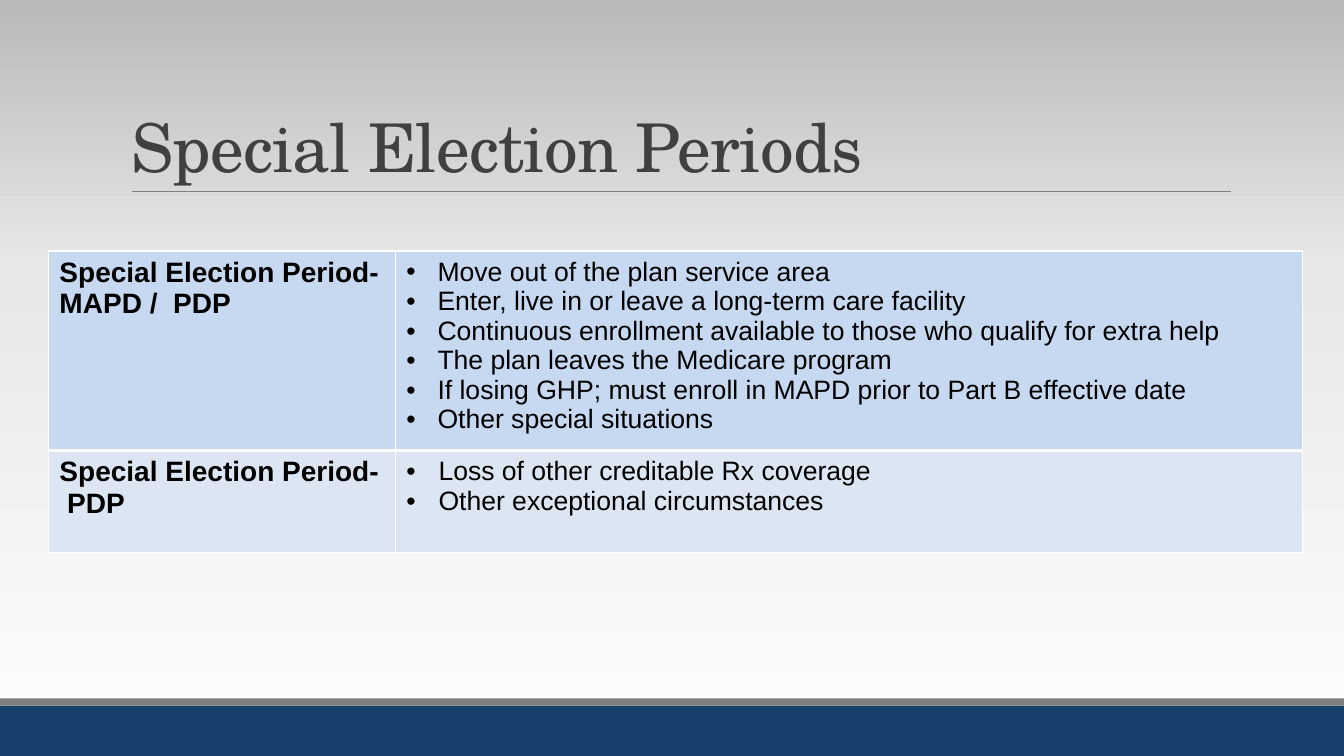
from lxml.etree import SubElement
from pptx import Presentation
from pptx.dml.color import RGBColor
from pptx.enum.shapes import MSO_CONNECTOR, MSO_SHAPE
from pptx.enum.text import MSO_ANCHOR, PP_ALIGN
from pptx.oxml import parse_xml
from pptx.oxml.ns import nsdecls, qn
from pptx.util import Inches, Pt

TITLE = "Special Election Periods"
# label, bullet indent in inches, row height in inches, fill, bullets
PERIODS = [
    ("Special Election Period- MAPD /  PDP", 0.31, 1.98, RGBColor(0xC6, 0xD9, 0xF1), [
        "Move out of the plan service area",
        "Enter, live in or leave a long-term care facility",
        "Continuous enrollment available to those who qualify for extra help",
        "The plan leaves the Medicare program",
        "If losing GHP; must enroll in MAPD prior to Part B effective date",
        "Other special situations",
    ]),
    ("Special Election Period-  PDP", 0.32, 1.01, RGBColor(0xDC, 0xE6, 0xF2), [
        "Loss of other creditable Rx coverage",
        "Other exceptional circumstances",
    ]),
]
COLUMN_WIDTHS = [3.44, 9]
BACKGROUND_STOPS = [(0, "FEFEFE"), (65, "E7E7E7"), (100, "B9B9B9")]

NAVY = RGBColor(0x17, 0x40, 0x6D)
GRAY = RGBColor(0x7F, 0x7F, 0x7F)
RULE_GRAY = RGBColor(0x80, 0x80, 0x80)
TITLE_GRAY = RGBColor(0x40, 0x40, 0x40)
BLACK = RGBColor(0, 0, 0)
WHITE = RGBColor(0xFF, 0xFF, 0xFF)

# top and height in inches, colour
FOOTER_BANDS = [(7, 0.5, NAVY), (6.93, 0.07, GRAY)]
TITLE_FORMAT = {"name": "TeX Gyre Schola", "size": Pt(48)}
LABEL_FORMAT = {"name": "Arial", "size": Pt(20), "bold": True}
BULLET_FORMAT = {"name": "Arial", "size": Pt(19), "bold": False}
CELL_MARGINS = {"margin_left": Inches(0.11), "margin_right": Inches(0.11),
                "margin_top": Inches(0.06), "margin_bottom": Inches(0.06)}


def set_format(target, values):
    for name, value in values.items():
        setattr(target, name, value)


def set_background(page):
    stops = "".join(f'<a:gs pos="{percent * 1000}"><a:srgbClr val="{color}"/></a:gs>'
                    for percent, color in BACKGROUND_STOPS)
    page.background.fill.solid()
    properties = page.background.fill._xPr
    properties.replace(properties.find(qn("a:solidFill")), parse_xml(
        f'<a:gradFill {nsdecls("a")} rotWithShape="1"><a:gsLst>{stops}</a:gsLst>'
        '<a:lin ang="16200000" scaled="0"/></a:gradFill>'))


def add_borders(cell, widths):
    properties = cell._tc.get_or_add_tcPr()
    for side, width in widths.items():
        line = SubElement(properties, qn(f"a:ln{side}"), w=str(Pt(width)))
        fill = SubElement(line, qn("a:solidFill"))
        SubElement(fill, qn("a:srgbClr"), val=str(WHITE))


def add_bullet(para, indent):
    properties = para._p.get_or_add_pPr()
    properties.set("marL", str(Inches(indent)))
    properties.set("indent", str(-Inches(indent)))
    SubElement(properties, qn("a:buFont"), typeface="Arial")
    SubElement(properties, qn("a:buChar"), char="•")


def fill_cell(cell, lines, text_format, color, borders, indent=None):
    add_borders(cell, borders)
    cell.fill.solid()
    cell.fill.fore_color.rgb = color
    set_format(cell, CELL_MARGINS)
    cell.text = "\n".join(lines)
    for para in cell.text_frame.paragraphs:
        if indent:
            add_bullet(para, indent)
        for span in para.runs:
            set_format(span.font, text_format)
            span.font.color.rgb = BLACK


def add_title(page):
    title = page.shapes.title
    set_format(title, {"left": Inches(1.2), "top": Inches(0.31),
                       "width": Inches(11), "height": Inches(1.59)})
    title.text_frame.text = TITLE
    set_format(title.text_frame, {"vertical_anchor": MSO_ANCHOR.BOTTOM, "word_wrap": True})
    para = title.text_frame.paragraphs[0]
    set_format(para, {"alignment": PP_ALIGN.LEFT, "line_spacing": 0.85})
    span = para.runs[0]
    set_format(span.font, TITLE_FORMAT)
    span.font.color.rgb = TITLE_GRAY
    span.font._element.set("spc", "-50")


def add_decoration(page, page_width):
    for top, height, color in FOOTER_BANDS:
        band = page.shapes.add_shape(MSO_SHAPE.RECTANGLE, 0, Inches(top),
                                     page_width, Inches(height))
        band.shadow.inherit = False
        band.fill.solid()
        band.fill.fore_color.rgb = color
        band.line.fill.background()
    rule = page.shapes.add_connector(MSO_CONNECTOR.STRAIGHT, Inches(1.31), Inches(1.9),
                                     Inches(12.21), Inches(1.9))
    rule.line.color.rgb = RULE_GRAY
    rule.line.width = Pt(0.5)
    SubElement(rule._element.spPr, qn("a:effectLst"))


def add_period_table(page):
    heights = [period[2] for period in PERIODS]
    table = page.shapes.add_table(
        len(PERIODS), len(COLUMN_WIDTHS), Inches(0.48), Inches(2.49),
        Inches(sum(COLUMN_WIDTHS)), Inches(sum(heights))).table
    set_format(table, {"first_row": False, "horz_banding": False})
    for column, width in zip(table.columns, COLUMN_WIDTHS):
        column.width = Inches(width)
    for index, (label, indent, height, color, bullets) in enumerate(PERIODS):
        table.rows[index].height = Inches(height)
        borders = {"L": 1, "R": 1, "T": 3 if index else 1,
                   "B": 3 if index < len(PERIODS) - 1 else 1}
        fill_cell(table.cell(index, 0), [label], LABEL_FORMAT, color, borders)
        fill_cell(table.cell(index, 1), bullets, BULLET_FORMAT, color, borders, indent)


def main():
    deck = Presentation()
    deck.slide_width, deck.slide_height = Inches(13.33), Inches(7.5)
    page = deck.slides.add_slide(deck.slide_layouts[5])
    set_background(page)
    add_decoration(page, deck.slide_width)
    add_period_table(page)
    add_title(page)
    deck.save("out.pptx")


if __name__ == "__main__":
    main()
